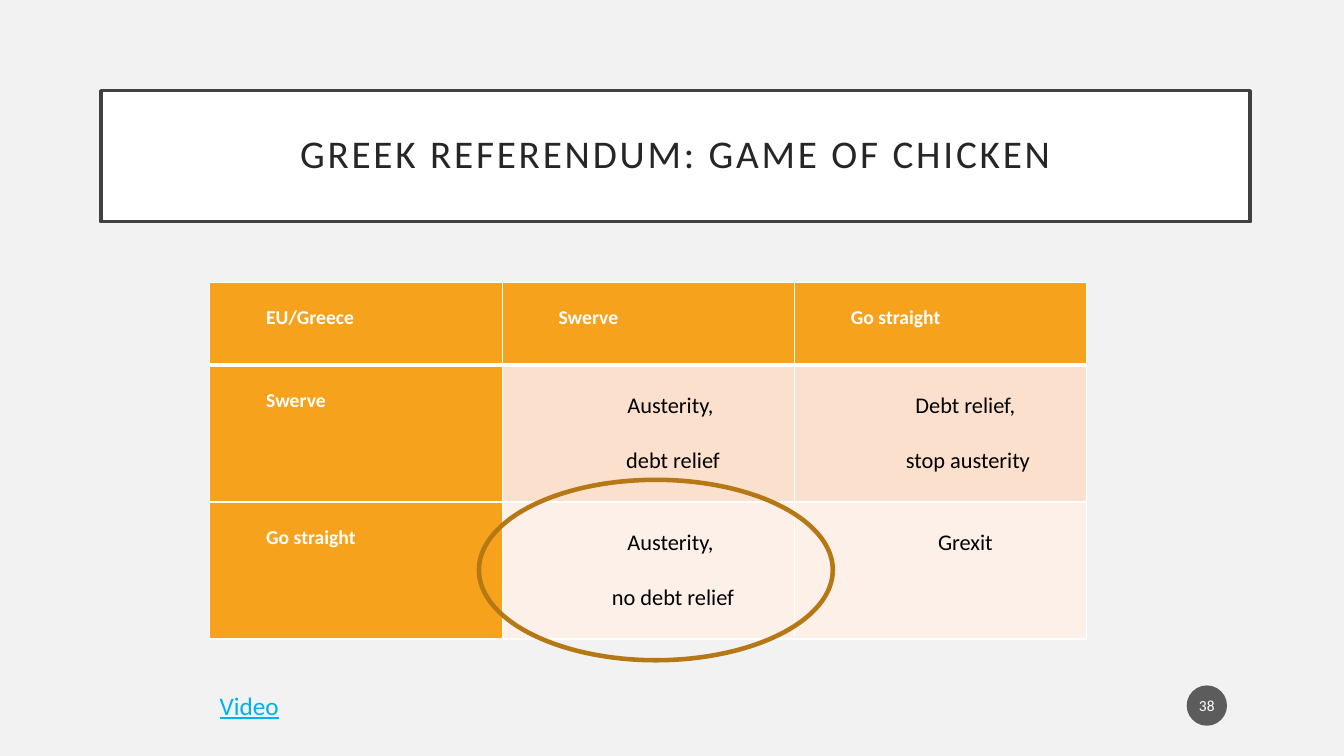
from dataclasses import dataclass

from lxml.etree import SubElement
from pptx import Presentation
from pptx.dml.color import RGBColor
from pptx.enum.shapes import MSO_SHAPE
from pptx.enum.text import MSO_ANCHOR, MSO_AUTO_SIZE, PP_ALIGN
from pptx.oxml.ns import qn
from pptx.util import Inches, Pt

FONT = "Calibri"
WHITE = RGBColor(0xFF, 0xFF, 0xFF)
BLACK = RGBColor(0x00, 0x00, 0x00)
BACKGROUND = RGBColor(0xF2, 0xF2, 0xF2)
TITLE_TEXT = RGBColor(0x26, 0x26, 0x26)
TITLE_BORDER = RGBColor(0x40, 0x40, 0x40)
ORANGE = RGBColor(0xF6, 0xA2, 0x1D)
PEACH = RGBColor(0xFB, 0xE0, 0xCD)
PALE_PEACH = RGBColor(0xFD, 0xF0, 0xE8)
RING = RGBColor(0xB6, 0x78, 0x15)
BADGE = RGBColor(0x1D, 0x1D, 0x1D)
LINK_BLUE = RGBColor(0x00, 0xB0, 0xF0)


@dataclass(frozen=True)
class CellStyle:
    size: float
    color: RGBColor
    bold: bool
    alignment: PP_ALIGN


@dataclass(frozen=True)
class PayoffRow:
    height: float
    fill: RGBColor
    cells: tuple[str, ...]
    bottom_border: float = 1


HEADING = CellStyle(14, WHITE, True, PP_ALIGN.JUSTIFY)
OUTCOME = CellStyle(16, BLACK, False, PP_ALIGN.CENTER)
COLUMN_WIDTH = 2.9
ROWS = (
    PayoffRow(0.82, ORANGE, ("EU/Greece", "Swerve", "Go straight"), 3),
    PayoffRow(1.36, PEACH,
              ("Swerve", "Austerity, \ndebt relief", "Debt relief,\n stop austerity")),
    PayoffRow(1.36, PALE_PEACH,
              ("Go straight", "Austerity, \nno debt relief", "Grexit")),
)


def add_run(paragraph, text: str, size: float, color: RGBColor, bold: bool = False):
    run = paragraph.add_run()
    run.text = text
    run.font.name = FONT
    run.font.size = Pt(size)
    run.font.bold = bold
    run.font.color.rgb = color
    return run


def set_insets(frame, horizontal: float, vertical: float) -> None:
    frame.margin_left = frame.margin_right = Inches(horizontal)
    frame.margin_top = frame.margin_bottom = Inches(vertical)


def add_border(cell, side: str, width: float) -> None:
    line = SubElement(cell._tc.get_or_add_tcPr(), qn(f"a:{side}"), w=str(Pt(width)))
    fill = SubElement(line, qn("a:solidFill"))
    SubElement(fill, qn("a:srgbClr"), val=str(WHITE))


def fill_cell(cell, text: str, style: CellStyle, fill: RGBColor,
              top_border: float, bottom_border: float) -> None:
    # Borders come before the fill in the cell properties
    for side, width in (("lnL", 1), ("lnR", 1), ("lnT", top_border), ("lnB", bottom_border)):
        add_border(cell, side, width)
    cell.fill.solid()
    cell.fill.fore_color.rgb = fill
    set_insets(cell, 0.07, 0)
    frame = cell.text_frame
    for index, line in enumerate(text.split("\n")):
        paragraph = frame.add_paragraph() if index else frame.paragraphs[0]
        paragraph.alignment = style.alignment
        paragraph.line_spacing = 2.0
        properties = paragraph._p.get_or_add_pPr()
        properties.set("marL", "0")
        properties.set("indent", str(Inches(0.49)))
        add_run(paragraph, line, style.size, style.color, style.bold)


def add_title(slide) -> None:
    title = slide.shapes.title
    title.left, title.top = Inches(1), Inches(0.9)
    title.width, title.height = Inches(11.4), Inches(1.3)
    title.fill.solid()
    title.fill.fore_color.rgb = WHITE
    title.line.color.rgb = TITLE_BORDER
    title.line.width = Pt(2.5)
    frame = title.text_frame
    frame.vertical_anchor = MSO_ANCHOR.MIDDLE
    set_insets(frame, 0.2, 0.2)
    paragraph = frame.paragraphs[0]
    paragraph.alignment = PP_ALIGN.CENTER
    paragraph.line_spacing = 0.9
    run = add_run(paragraph, "GREEK REFERENDUM: GAME OF CHICKEN", 28, TITLE_TEXT)
    run.font._element.set("spc", "200")


def add_payoff_table(slide) -> None:
    column_count = len(ROWS[0].cells)
    table = slide.shapes.add_table(
        len(ROWS), column_count, Inches(2.08), Inches(2.8),
        Inches(COLUMN_WIDTH * column_count), Inches(sum(row.height for row in ROWS))).table
    for column in table.columns:
        column.width = Inches(COLUMN_WIDTH)
    top_border = 1
    for row_index, row in enumerate(ROWS):
        table.rows[row_index].height = Inches(row.height)
        for column_index, text in enumerate(row.cells):
            is_heading = row_index == 0 or column_index == 0
            fill_cell(table.cell(row_index, column_index), text,
                      HEADING if is_heading else OUTCOME,
                      ORANGE if is_heading else row.fill,
                      top_border, row.bottom_border)
        top_border = row.bottom_border


def add_ellipse(slide, left: float, top: float, width: float, height: float):
    ellipse = slide.shapes.add_shape(
        MSO_SHAPE.OVAL, Inches(left), Inches(top), Inches(width), Inches(height))
    ellipse.shadow.inherit = False
    return ellipse


def add_page_badge(slide) -> None:
    badge = add_ellipse(slide, 11.77, 6.8, 0.4, 0.4)
    badge.fill.solid()
    badge.fill.fore_color.rgb = BADGE
    color = badge.fill._xPr.find(qn("a:solidFill")).find(qn("a:srgbClr"))
    SubElement(color, qn("a:alpha"), val="70000")
    badge.line.fill.background()
    frame = badge.text_frame
    frame.vertical_anchor = MSO_ANCHOR.MIDDLE
    set_insets(frame, 0.02, 0.05)
    frame.paragraphs[0].alignment = PP_ALIGN.CENTER
    add_run(frame.paragraphs[0], "38", 11, WHITE)


def add_outcome_ring(slide) -> None:
    ring = add_ellipse(slide, 4.75, 4.76, 3.51, 1.79)
    ring.fill.background()
    ring.line.color.rgb = RING
    ring.line.width = Pt(3.25)


def add_video_label(slide) -> None:
    label = slide.shapes.add_textbox(Inches(2.08), Inches(6.8), Inches(0.8), Inches(0.4))
    frame = label.text_frame
    frame.word_wrap = False
    frame.auto_size = MSO_AUTO_SIZE.SHAPE_TO_FIT_TEXT
    run = add_run(frame.paragraphs[0], "Video", 18, LINK_BLUE)
    run.font.underline = True


def main() -> None:
    presentation = Presentation()
    presentation.slide_width = Inches(13.33)
    presentation.slide_height = Inches(7.5)
    slide = presentation.slides.add_slide(presentation.slide_layouts[5])
    slide.background.fill.solid()
    slide.background.fill.fore_color.rgb = BACKGROUND

    add_title(slide)
    add_payoff_table(slide)
    add_page_badge(slide)
    add_outcome_ring(slide)
    add_video_label(slide)
    presentation.save("out.pptx")


if __name__ == "__main__":
    main()
